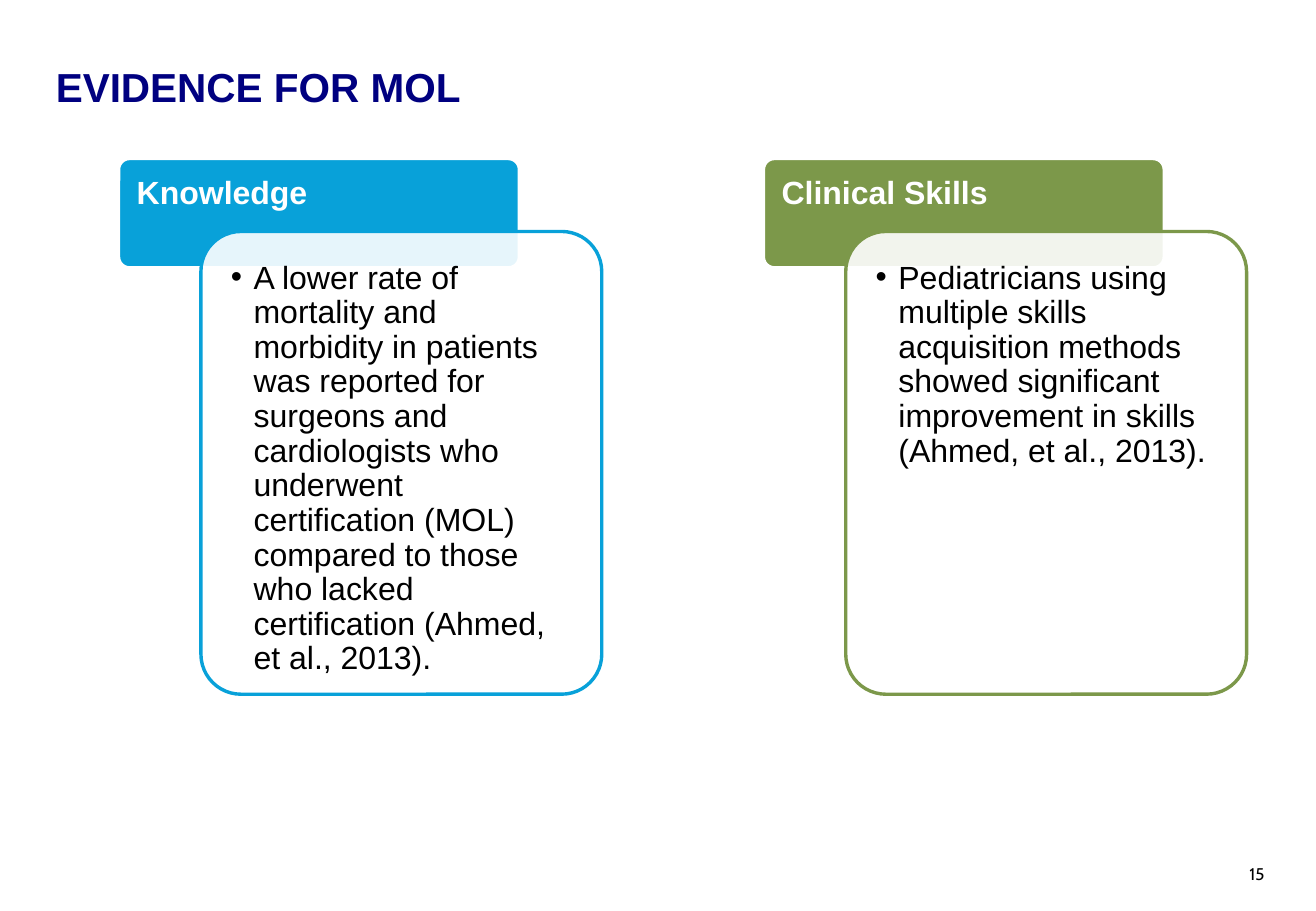
from lxml.etree import SubElement
from pptx import Presentation
from pptx.dml.color import RGBColor
from pptx.enum.shapes import MSO_SHAPE as Preset
from pptx.enum.text import MSO_ANCHOR as Anchor, PP_ALIGN as Align
from pptx.oxml.ns import qn
from pptx.util import Pt

WHITE = RGBColor(0xFF, 0xFF, 0xFF)
BLACK = RGBColor(0x00, 0x00, 0x00)
NAVY = RGBColor(0x00, 0x00, 0x80)
BLUE = RGBColor(0x08, 0xA1, 0xD9)
GREEN = RGBColor(0x7C, 0x98, 0x4A)

COLUMN_LEFT, COLUMN_PITCH = 70.3, 382.2
CARD_SHIFT = 48.8
PANEL_WIDTH = 237.6
TIGHT_SPACING = 0.9

TITLE_FONT = {"name": "Arial", "size": Pt(24), "bold": True}
HEADING_FONT = {"name": "Arial", "size": Pt(19), "bold": True}
BODY_FONT = {"name": "Arial", "size": Pt(19)}
NUMBER_FONT = {"name": "Cabin", "size": Pt(10)}

COLUMNS = [
    ("Knowledge", BLUE,
     "A lower rate of mortality and morbidity in patients was reported for "
     "surgeons and cardiologists who underwent certification (MOL) compared "
     "to those who lacked certification (Ahmed, et al., 2013)."),
    ("Clinical Skills", GREEN,
     "Pediatricians using multiple skills acquisition methods showed "
     "significant improvement in skills (Ahmed, et al., 2013)."),
]


def apply_format(target, values):
    """Set each named attribute on the target."""
    for name, value in values.items():
        setattr(target, name, value)


def write_text(holder, text, font, color, insets, spacing=1.0):
    """Fill a shape with one top-left paragraph and return the paragraph."""
    left, top, right, bottom = map(Pt, insets)
    frame = holder.text_frame
    apply_format(frame, {
        "word_wrap": True, "vertical_anchor": Anchor.TOP,
        "margin_left": left, "margin_top": top,
        "margin_right": right, "margin_bottom": bottom,
    })
    paragraph = frame.paragraphs[0]
    apply_format(paragraph, {"alignment": Align.LEFT, "line_spacing": spacing})
    run = paragraph.add_run()
    run.text = text
    apply_format(run.font, font)
    run.font.color.rgb = color
    return paragraph


def add_panel(slide, box, fill, outline):
    """Draw a rounded panel with a two-point outline."""
    panel = slide.shapes.add_shape(Preset.ROUNDED_RECTANGLE, *map(Pt, box))
    panel.shadow.inherit = False
    panel.adjustments[0] = 0.1
    panel.fill.solid()
    panel.fill.fore_color.rgb = fill
    panel.line.color.rgb = outline
    panel.line.width = Pt(2)
    return panel


def set_opacity(panel, percent):
    """Make the solid fill of a panel partly transparent."""
    color = panel.fill._xPr.find(qn("a:solidFill"))[0]
    SubElement(color, qn("a:alpha"), val=str(percent * 1000))


def add_bullet(paragraph, indent):
    """Give a paragraph a hanging round bullet."""
    properties = paragraph._p.get_or_add_pPr()
    properties.set("marL", str(Pt(indent)))
    properties.set("indent", str(-Pt(indent)))
    SubElement(properties, qn("a:buFont"), typeface="Arial")
    SubElement(properties, qn("a:buChar"), char="•")


def add_column(slide, left, heading, color, evidence):
    """Draw a heading panel overlapped by its evidence card."""
    header = add_panel(slide, (left, 94, PANEL_WIDTH, 64.8), color, WHITE)
    write_text(header, heading, HEADING_FONT, WHITE,
               (8.9, 8.9, 8.9, 5.8), TIGHT_SPACING)
    card_box = (left + CARD_SHIFT, 137.2, PANEL_WIDTH, 274.3)
    card = add_panel(slide, card_box, WHITE, color)
    set_opacity(card, 90)
    body = write_text(card, evidence, BODY_FONT, BLACK,
                      (10.8,) * 4, TIGHT_SPACING)
    add_bullet(body, 13.5)


def add_title(slide, text):
    """Write the slide title."""
    title = slide.shapes.add_textbox(Pt(26), Pt(33), Pt(641.5), Pt(43.2))
    write_text(title, text, TITLE_FONT, NAVY, (7.2, 3.6, 7.2, 3.6))


def add_slide_number(slide, number):
    """Write the page number in an unfilled ellipse."""
    badge = slide.shapes.add_shape(
        Preset.OVAL, Pt(727.2), Pt(502.6), Pt(43.2), Pt(39.6))
    badge.shadow.inherit = False
    badge.fill.background()
    badge.line.fill.background()
    write_text(badge, number, NUMBER_FONT, BLACK, (7.2, 3.6, 7.2, 3.6))


def main():
    """Build the slide and save it."""
    deck = Presentation()
    apply_format(deck, {"slide_width": Pt(780), "slide_height": Pt(540)})
    slide = deck.slides.add_slide(deck.slide_layouts[6])
    add_title(slide, "EVIDENCE FOR MOL")
    add_slide_number(slide, "15")
    for index, column in enumerate(COLUMNS):
        add_column(slide, COLUMN_LEFT + index * COLUMN_PITCH, *column)
    deck.save("out.pptx")


if __name__ == "__main__":
    main()
